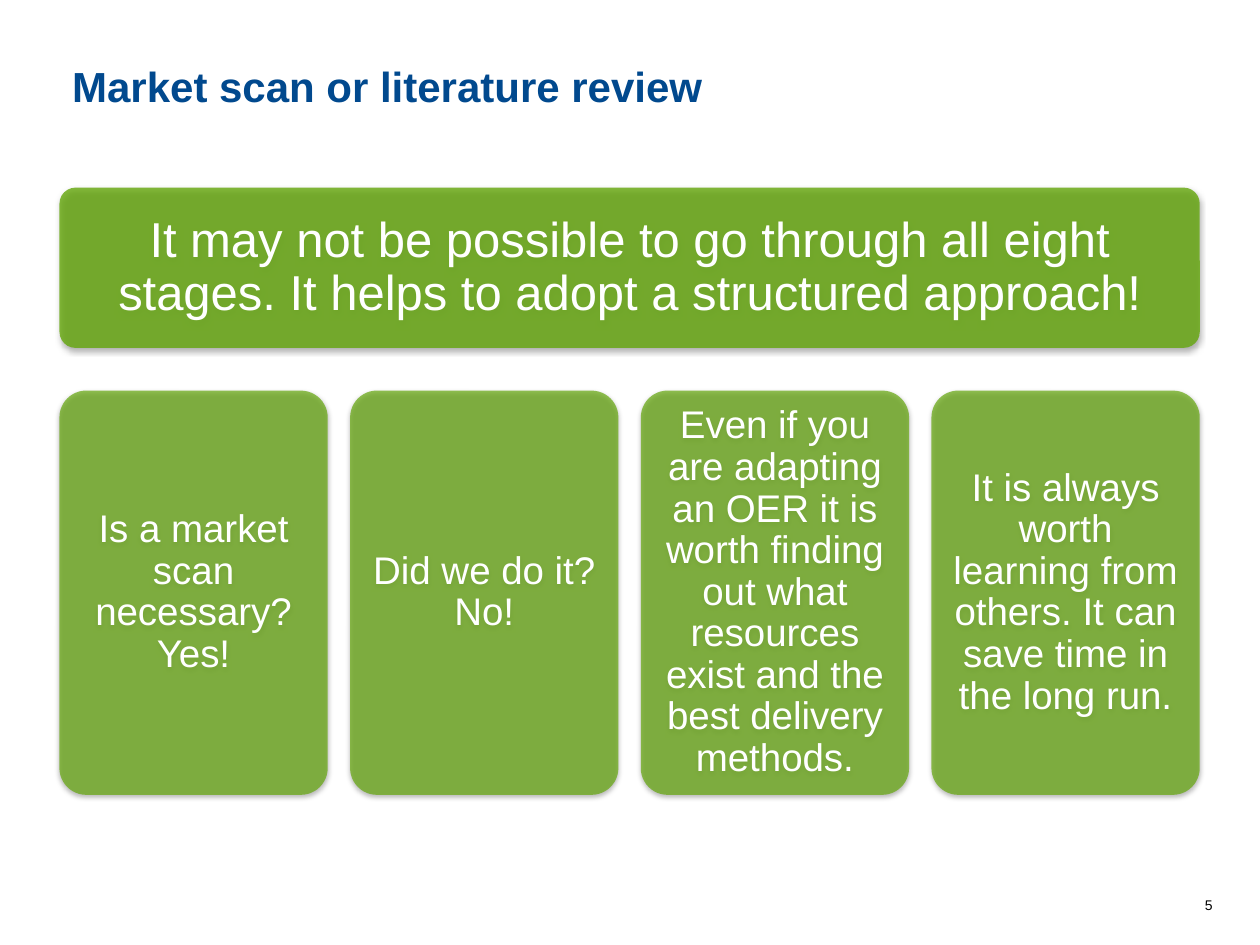
import pptx
import pptx.util
import pptx.dml.color
import pptx.enum.shapes
import pptx.enum.text
import pptx.oxml
import pptx.oxml.ns

Pt = pptx.util.Pt
ALIGN = pptx.enum.text.PP_ALIGN
ANCHOR = pptx.enum.text.MSO_ANCHOR
GREEN = "64A70B"
WHITE = "FFFFFF"
SHADOW = (
    f'<a:effectLst {pptx.oxml.ns.nsdecls("a")}>'
    '<a:outerShdw blurRad="39370" dist="20320" dir="5400000" rotWithShape="0">'
    '<a:srgbClr val="000000"><a:alpha val="38000"/></a:srgbClr>'
    '</a:outerShdw></a:effectLst>'
)


def color(value):
    return pptx.dml.color.RGBColor.from_string(value)


def write(shape, text, size, fill, bold=False, align=ALIGN.LEFT,
          anchor=ANCHOR.MIDDLE, margins=(7.2, 3.6, 7.2, 3.6), spacing=1.0):
    frame = shape.text_frame
    frame.word_wrap = True
    frame.auto_size = pptx.enum.text.MSO_AUTO_SIZE.NONE
    frame.vertical_anchor = anchor
    (frame.margin_left, frame.margin_top,
     frame.margin_right, frame.margin_bottom) = map(Pt, margins)
    para = frame.paragraphs[0]
    para.alignment = align
    para.line_spacing = spacing
    para.space_before = Pt(0)
    span = para.add_run()
    span.text = text
    span.font.name = "Arial"
    span.font.size = Pt(size)
    span.font.bold = bold
    span.font.color.rgb = color(fill)


def add_title(page, box, text):
    title = page.shapes.title
    title.left, title.top, title.width, title.height = map(Pt, box)
    write(title, text, 24, "01498E", bold=True, anchor=ANCHOR.TOP,
          margins=(7.2, 6, 7.2, 0))


def add_panel(page, box, text, size, opacity, margin):
    panel = page.shapes.add_shape(
        pptx.enum.shapes.MSO_SHAPE.ROUNDED_RECTANGLE, *map(Pt, box))
    panel.adjustments[0] = 0.1
    panel.fill.solid()
    panel.fill.fore_color.rgb = color(GREEN)
    tint = panel.fill._xPr.find(".//" + pptx.oxml.ns.qn("a:srgbClr"))
    alpha = tint.makeelement(pptx.oxml.ns.qn("a:alpha"), {"val": str(opacity * 1000)})
    tint.append(alpha)
    panel.line.fill.background()
    panel._element.spPr.append(pptx.oxml.parse_xml(SHADOW))
    write(panel, text, size, WHITE, align=ALIGN.CENTER,
          margins=(margin,) * 4, spacing=0.9)


def add_cards(page, box, texts, gap):
    left, top, width, height = box
    card_width = (width - gap * (len(texts) - 1)) / len(texts)
    for index, text in enumerate(texts):
        card_left = left + index * (card_width + gap)
        add_panel(page, (card_left, top, card_width, height), text, 22, 70, 6.6)


def add_page_number(page, box, text):
    number = page.shapes.add_textbox(*map(Pt, box))
    write(number, text, 8, "000000", align=ALIGN.RIGHT)


def main():
    deck = pptx.Presentation()
    deck.slide_width, deck.slide_height = Pt(720), Pt(540)
    page = deck.slides.add_slide(deck.slide_layouts[5])
    add_page_number(page, (388, 508.3, 312, 17.3), "5")
    add_title(page, (34, 28.8, 652, 36), "Market scan or literature review")
    add_panel(page, (34, 107.2, 651.6, 91.6),
              "It may not be possible to go through all eight stages. "
              "It helps to adopt a structured approach!", 28, 80, 8.6)
    add_cards(page, (34, 223.2, 651.6, 231), [
        "Is a market scan necessary? Yes!",
        "Did we do it? No!",
        "Even if you are adapting an OER it is worth finding out what "
        "resources exist and the best delivery methods.",
        "It is always worth learning from others. "
        "It can save time in the long run.",
    ], gap=12.8)
    deck.save("out.pptx")


if __name__ == "__main__":
    main()
